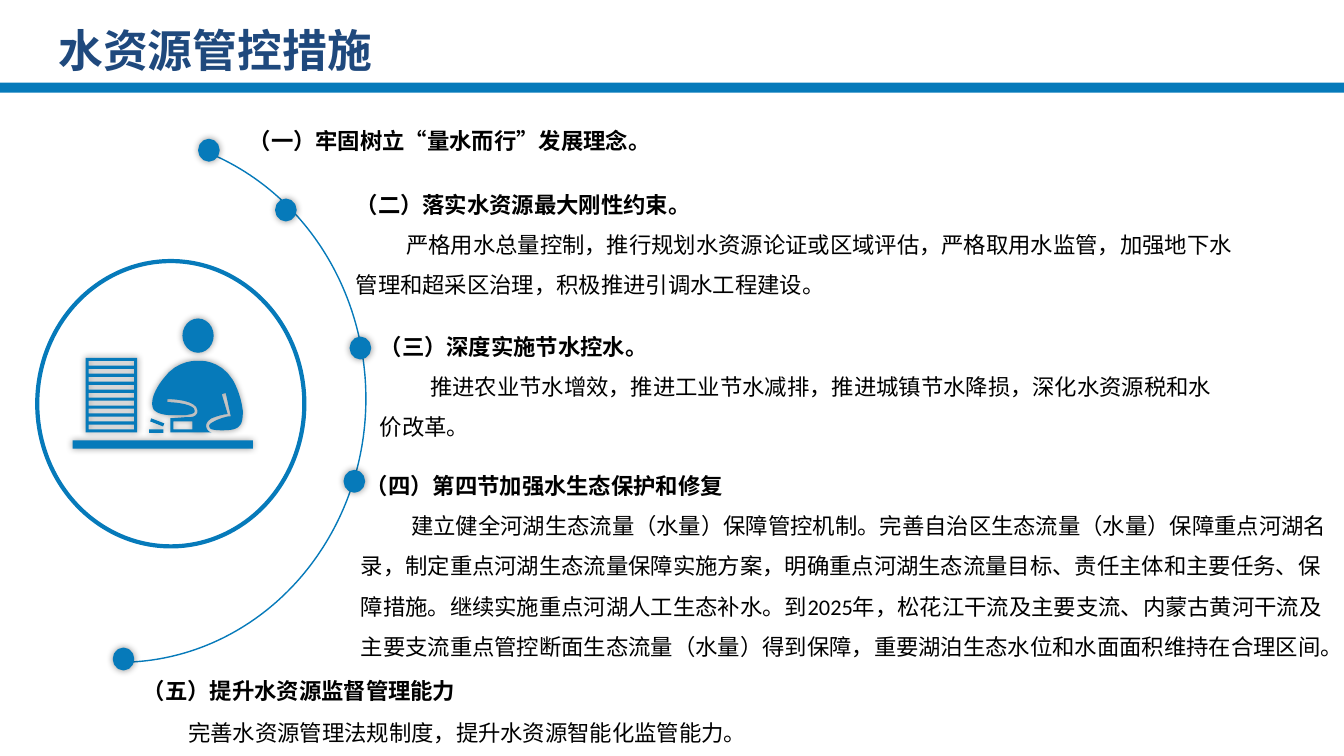
import pptx
import pptx.dml.color
import pptx.enum.shapes
import pptx.enum.text
import pptx.oxml
import pptx.oxml.ns
import pptx.util
from dataclasses import dataclass

Pt = pptx.util.Pt
SHAPE = pptx.enum.shapes.MSO_SHAPE
AUTO_SIZE = pptx.enum.text.MSO_AUTO_SIZE
rgb = pptx.dml.color.RGBColor.from_string


@dataclass(frozen=True)
class Theme:
    blue: str = "067ABA"
    navy: str = "1F497D"
    black: str = "000000"
    latin: str = "Calibri"
    chinese: str = "Noto Sans CJK SC"
    title_size: int = 32
    body_size: int = 16
    thin: int = 1
    thick: int = 3


def flatten(points, steps=8):
    """Turn 2-value line points and 6-value Bezier segments into plain vertices."""
    out = []
    for point in points:
        if len(point) == 2:
            out.append(point)
            continue
        x0, y0 = out[-1]
        x1, y1, x2, y2, x3, y3 = point
        for i in range(1, steps + 1):
            t = i / steps
            u = 1 - t
            a, b, c, d = u ** 3, 3 * u * u * t, 3 * u * t * t, t ** 3
            out.append((a * x0 + b * x1 + c * x2 + d * x3,
                        a * y0 + b * y1 + c * y2 + d * y3))
    return out


def box(x, y, w, h):
    return [(x, y), (x + w, y), (x + w, y + h), (x, y + h)]


class Deck:
    """Holds the theme and the current slide; all lengths are in points."""

    def __init__(self, slide, theme):
        self.s = slide
        self.theme = theme

    def style(self, sp, fill, line, shadow):
        sp.shadow.inherit = False
        if fill:
            sp.fill.solid()
            sp.fill.fore_color.rgb = rgb(self.theme.blue)
        else:
            sp.fill.background()
        if line:
            sp.line.color.rgb = rgb(self.theme.blue)
            sp.line.width = Pt(line)
        else:
            sp.line.fill.background()
        if shadow:
            effects = sp._element.spPr.find(pptx.oxml.ns.qn("a:effectLst"))
            effects.append(pptx.oxml.parse_xml(
                f'<a:outerShdw {pptx.oxml.ns.nsdecls("a")} blurRad="{Pt(5)}" dist="0" dir="0">'
                '<a:srgbClr val="000000"><a:alpha val="40000"/></a:srgbClr></a:outerShdw>'))

    def shape(self, kind, x, y, w, h, fill=True, line=0, shadow=False):
        sp = self.s.shapes.add_shape(kind, Pt(x), Pt(y), Pt(w), Pt(h))
        self.style(sp, fill, line, shadow)
        return sp

    def dot(self, cx, cy):
        w, h = 12.4, 13.3
        self.shape(SHAPE.OVAL, cx - w / 2, cy - h / 2, w, h,
                   line=self.theme.thick, shadow=True)

    def outline(self, *contours):
        """Draw a filled outline; contours after the first are holes."""
        builder = None
        for contour in contours:
            points = [(Pt(x), Pt(y)) for x, y in contour]
            if builder is None:
                builder = self.s.shapes.build_freeform(*points[0])
            else:
                builder.move_to(*points[0])
            builder.add_line_segments(points[1:], close=True)
        self.style(builder.convert_to_shape(), True, 0, True)

    def text(self, x, y, w, h, paragraphs, size=None, color=None, latin=None,
             spacing=None, wrap=True):
        """Add a text box; each paragraph is (text, bold, first-line indent)."""
        tf = self.s.shapes.add_textbox(Pt(x), Pt(y), Pt(w), Pt(h)).text_frame
        tf.word_wrap = wrap
        tf.auto_size = AUTO_SIZE.SHAPE_TO_FIT_TEXT
        for i, (words, bold, indent) in enumerate(paragraphs):
            p = tf.add_paragraph() if i else tf.paragraphs[0]
            if spacing:
                p.line_spacing = spacing
            if indent:
                pPr = p._p.get_or_add_pPr()
                pPr.set("marL", "0")
                pPr.set("indent", str(Pt(indent)))
            r = p.add_run()
            r.text = words
            r.font.size = Pt(size or self.theme.body_size)
            r.font.bold = bold
            r.font.color.rgb = rgb(color or self.theme.black)
            r.font.name = latin or self.theme.latin
            r._r.get_or_add_rPr().append(pptx.oxml.parse_xml(
                f'<a:ea {pptx.oxml.ns.nsdecls("a")} typeface="{self.theme.chinese}"/>'))


BODY = [
    (147.6, 306), (146.2, 302.4, 149, 300.2, 151.2, 298.8),
    (154.8, 297.4, 159.1, 295.9, 162.7, 295.9), (158.4, 281.5), (161.3, 280.8),
    (164.9, 297.4), (163.4, 297.4), (163.4, 297.4, 156.2, 298.8, 151.9, 301.7),
    (151.9, 301.7, 148.3, 303.1, 149.8, 305.3),
    (149.8, 306, 150.5, 307.4, 158.4, 307.4),
    (165.6, 307.4, 169.2, 306.7, 171.4, 303.8),
    (172.8, 302.4, 173.5, 298.8, 173.5, 293.8),
    (172.1, 280.8, 166.3, 271.4, 166.3, 271.4),
    (157, 256.3, 141.8, 257.8, 141.8, 257.8),
    (141.8, 257.8, 126.7, 256.3, 116.6, 270.7),
    (116.6, 270.7, 108.7, 280.1, 108.7, 288),
    (108.7, 290.2, 109.4, 292.3, 110.2, 293),
    (113, 295.9, 118.8, 296.6, 122.4, 296.6), (132.5, 296.6),
    (136.1, 295.9, 137.5, 295.9, 139, 294.5), (139, 293),
    (139, 289.4, 127.4, 287.3, 119.5, 287.3), (119.5, 285.1),
    (123.1, 285.1, 140.4, 285.8, 141.1, 293),
    (141.1, 294.5, 141.1, 295.2, 140.4, 295.9),
    (139, 298.1, 136.1, 298.1, 131.8, 298.1), (122.4, 298.8), (121.7, 298.8),
    (121.7, 308.9), (151.2, 308.9), (149.8, 308.9, 148.3, 307.4, 147.6, 306),
]
PEN = [(117.4, 302.4), (108, 298.8), (107.3, 301), (116.6, 304.6)]
DOTS = [(204.2, 150), (257.4, 248.6), (253.1, 343.8), (149.2, 107.3), (88.2, 470.7)]
FIRST_LINE = 36
SECTIONS = [
    (250.6, 324, 710, 152.6, [
        ("（四）第四节加强水生态保护和修复", True, 3.6),
        ("建立健全河湖生态流量（水量）保障管控机制。完善自治区生态流量（水量）保障重点河湖名录，"
         "制定重点河湖生态流量保障实施方案，明确重点河湖生态流量目标、责任主体和主要任务、保障措施。"
         "继续实施重点河湖人工生态补水。到2025年，松花江干流及主要支流、内蒙古黄河干流及主要支流"
         "重点管控断面生态流量（水量）得到保障，重要湖泊生态水位和水面面积维持在合理区间。",
         False, FIRST_LINE)]),
    (247, 123.1, 649.4, 94.3, [
        ("（二）落实水资源最大刚性约束。", True, 0),
        ("严格用水总量控制，推行规划水资源论证或区域评估，严格取用水监管，"
         "加强地下水管理和超采区治理，积极推进引调水工程建设。", False, FIRST_LINE)]),
    (264.2, 224.6, 614.9, 94.3, [
        ("（三）深度实施节水控水。", True, 0),
        ("推进农业节水增效，推进工业节水减排，推进城镇节水降损，深化水资源税和水价改革。",
         False, FIRST_LINE)]),
    (95, 470.2, 702, 36, [("（五）提升水资源监督管理能力", True, 0)]),
    (127.4, 500.4, 721.4, 39.6,
     [("完善水资源管理法规制度，提升水资源智能化监管能力。", False, 0)]),
]


def main():
    prs = pptx.Presentation()
    prs.slide_width, prs.slide_height = Pt(960), Pt(540)
    theme = Theme()
    deck = Deck(prs.slides.add_slide(prs.slide_layouts[6]), theme)

    deck.text(34.6, 13, 239.8, 46.1, [("水资源管控措施", True, 0)], size=theme.title_size,
              color=theme.navy, latin=theme.chinese, wrap=False)
    deck.shape(SHAPE.RECTANGLE, 0, 59, 960, 7.2)

    arc = deck.shape(SHAPE.ARC, -90.7, 96.5, 352.1, 376.6, fill=False, line=theme.thin)
    arc.adjustments[0], arc.adjustments[1] = 174.59, 53.53
    deck.shape(SHAPE.OVAL, 26.6, 186.5, 190.8, 203.8, fill=False, line=theme.thick)

    deck.outline(flatten(BODY), box(123.8, 301, 13.7, 5.7))
    deck.shape(SHAPE.OVAL, 130.3, 227.5, 22.3, 24.5, shadow=True)
    deck.outline(PEN)
    deck.shape(SHAPE.RECTANGLE, 106.6, 306.7, 10.1, 2.6, shadow=True)
    shelf_gaps = [box(63.4, 257.8 + 5.7 * i, 32.4, 3.4) for i in range(9)]
    deck.outline(box(61.2, 255.6, 36.7, 53.3), *shelf_gaps)
    deck.shape(SHAPE.RECTANGLE, 51.8, 314.6, 128.9, 5.8, shadow=True)

    for cx, cy in DOTS:
        deck.dot(cx, cy)
    deck.text(170.6, 87.1, 307.4, 26.6,
              [("（一）牢固树立“量水而行”发展理念。", True, 0)], wrap=False)
    for section in SECTIONS:
        deck.text(*section, spacing=1.5)
    prs.save("out.pptx")


if __name__ == "__main__":
    main()
